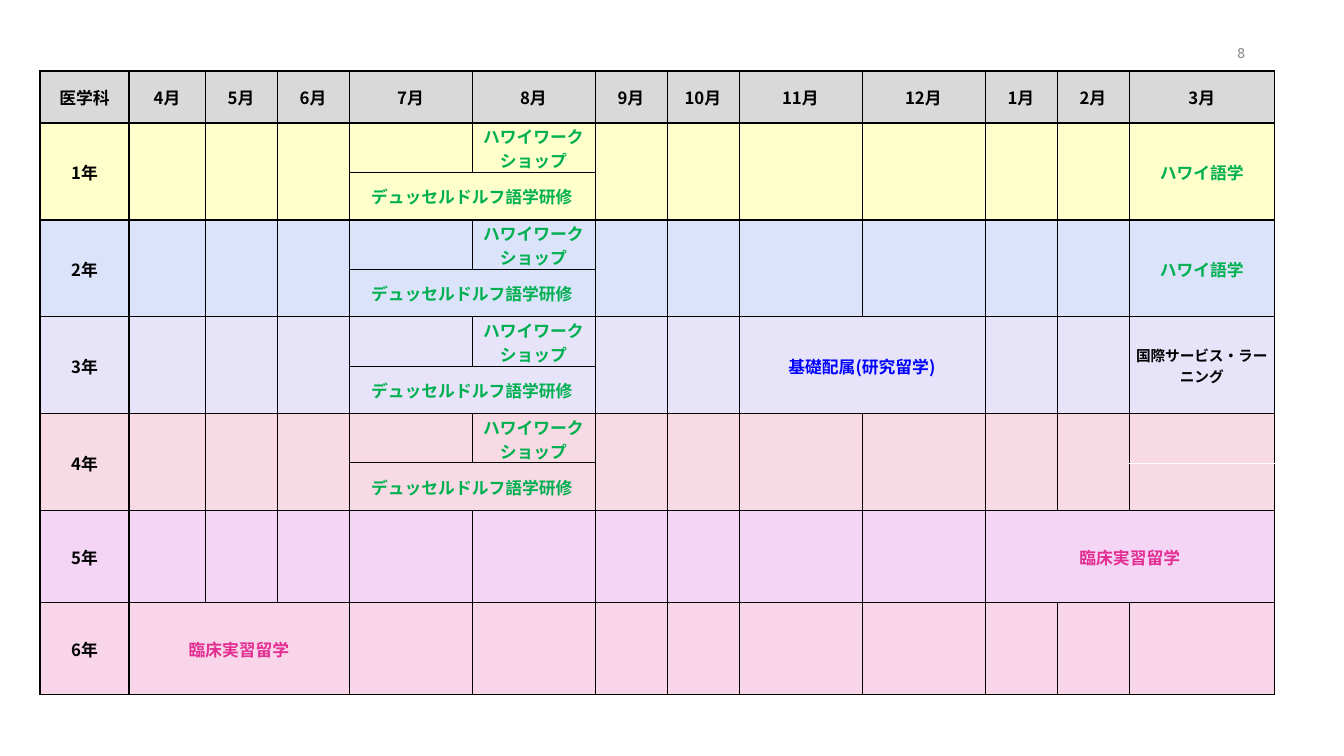
from dataclasses import dataclass
from typing import Optional

import lxml.etree
import pptx
import pptx.dml.color
import pptx.enum.text
import pptx.oxml.ns
import pptx.util

RGBColor = pptx.dml.color.RGBColor
EMU_PER_PX = 914400 / 100.8

BLACK = RGBColor(0x00, 0x00, 0x00)
WHITE = RGBColor(0xFF, 0xFF, 0xFF)
GREY = RGBColor(0x8C, 0x8C, 0x8C)
GREEN = RGBColor(0x00, 0xB0, 0x50)
BLUE = RGBColor(0x00, 0x00, 0xFF)
MAGENTA = RGBColor(0xE3, 0x2D, 0x91)
HEADER_FILL = RGBColor(0xD9, 0xD9, 0xD9)

TABLE_FONT = "Noto Sans CJK JP"
NUMBER_FONT = "Roboto Slab"
COLUMN_WIDTHS = [89, 76, 72, 72, 123, 123, 72, 72, 123, 123, 72, 72, 146]
ROW_HEIGHTS = [52] + [49, 48] * 4 + [92, 92]
MONTHS = [4, 5, 6, 7, 8, 9, 10, 11, 12, 1, 2, 3]
JULY, AUGUST, MARCH = 4, 5, 12


@dataclass(frozen=True)
class Year:
    label: str
    fill: RGBColor
    row: int
    rows: int = 1


@dataclass(frozen=True)
class Entry:
    row: int
    column: int
    text: str = ""
    colour: RGBColor = BLACK
    rows: int = 1
    columns: int = 1
    size: float = 12


@dataclass(frozen=True)
class Edge:
    colour: RGBColor
    points: float


THICK = Edge(BLACK, 1)
THIN = Edge(BLACK, 0.5)
FAINT = Edge(WHITE, 0.25)

YEARS = [
    Year("医学科", HEADER_FILL, 0),
    Year("1年", RGBColor(0xFF, 0xFF, 0xCC), 1, 2),
    Year("2年", RGBColor(0xDA, 0xE3, 0xFA), 3, 2),
    Year("3年", RGBColor(0xE7, 0xE3, 0xF9), 5, 2),
    Year("4年", RGBColor(0xF7, 0xDA, 0xE3), 7, 2),
    Year("5年", RGBColor(0xF4, 0xD5, 0xF5), 9),
    Year("6年", RGBColor(0xF9, 0xD5, 0xE9), 10),
]
YEAR_BOUNDARIES = {year.row for year in YEARS} | {len(ROW_HEIGHTS)}

PROGRAMMES = [
    Entry(1, MARCH, "ハワイ語学", GREEN, rows=2),
    Entry(3, 3, rows=2),
    Entry(3, 9, rows=2),
    Entry(3, 11, rows=2),
    Entry(3, MARCH, "ハワイ語学", GREEN, rows=2),
    Entry(5, 8, "基礎配属(研究留学)", BLUE, rows=2, columns=2),
    Entry(5, MARCH, "国際サービス・ラーニング", rows=2, size=10.5),
    Entry(7, 10, rows=2),
    Entry(9, 10, "臨床実習留学", MAGENTA, columns=3),
    Entry(10, 1, "臨床実習留学", MAGENTA, columns=3),
]


def px(length: int) -> pptx.util.Emu:
    return pptx.util.Emu(round(length * EMU_PER_PX))


def schedule_entries() -> list[Entry]:
    entries = [Entry(0, column, f"{month}月") for column, month in enumerate(MONTHS, 1)]
    for year in YEARS:
        entries.append(Entry(year.row, 0, year.label, rows=year.rows))
        if year.rows == 2:
            entries.append(Entry(year.row, AUGUST, "ハワイワークショップ", GREEN))
            entries.append(Entry(year.row + 1, JULY, "デュッセルドルフ語学研修", GREEN, columns=2))
    entries += PROGRAMMES
    taken = {
        (row, column)
        for entry in entries
        for row in range(entry.row, entry.row + entry.rows)
        for column in range(entry.column, entry.column + entry.columns)
    }
    entries += [
        Entry(row, column)
        for row in range(len(ROW_HEIGHTS))
        for column in range(len(COLUMN_WIDTHS))
        if (row, column) not in taken
    ]
    return entries


def vertical_edge(boundary: int) -> Edge:
    return THICK if boundary in (0, 1, len(COLUMN_WIDTHS)) else THIN


def horizontal_edge(boundary: int, column: int) -> Optional[Edge]:
    if boundary in YEAR_BOUNDARIES:
        return THICK
    if column in (JULY, AUGUST):
        return THIN
    return FAINT if column == MARCH else None


def add_border(cell: pptx.table._Cell, side: str, edge: Optional[Edge]) -> None:
    qn = pptx.oxml.ns.qn
    line = lxml.etree.SubElement(cell._tc.get_or_add_tcPr(), qn(f"a:ln{side}"))
    if edge is None:
        lxml.etree.SubElement(line, qn("a:noFill"))
        return
    line.set("w", str(pptx.util.Pt(edge.points)))
    solid = lxml.etree.SubElement(line, qn("a:solidFill"))
    lxml.etree.SubElement(solid, qn("a:srgbClr"), val=str(edge.colour))


def style_paragraph(para: pptx.text.text._Paragraph, name: str, size: float, colour: RGBColor) -> None:
    para.font.size = pptx.util.Pt(size)
    para.font.color.rgb = colour
    para.font.name = name
    lxml.etree.SubElement(para.font._element, pptx.oxml.ns.qn("a:ea"), typeface=name)


def draw_entry(table: pptx.table.Table, entry: Entry) -> None:
    last_row = entry.row + entry.rows
    last_column = entry.column + entry.columns
    origin = table.cell(entry.row, entry.column)
    if entry.rows * entry.columns > 1:
        origin.merge(table.cell(last_row - 1, last_column - 1))
    fill = next(year.fill for year in reversed(YEARS) if year.row <= entry.row)
    edges = {
        "L": vertical_edge(entry.column),
        "R": vertical_edge(last_column),
        "T": horizontal_edge(entry.row, entry.column),
        "B": horizontal_edge(last_row, entry.column),
    }
    for row in range(entry.row, last_row):
        for column in range(entry.column, last_column):
            cell = table.cell(row, column)
            for side, edge in edges.items():
                add_border(cell, side, edge)
            cell.fill.solid()
            cell.fill.fore_color.rgb = fill
    origin.margin_left = origin.margin_right = origin.margin_top = px(1)
    origin.margin_bottom = 0
    origin.vertical_anchor = pptx.enum.text.MSO_ANCHOR.MIDDLE
    para = origin.text_frame.paragraphs[0]
    para.text = entry.text
    para.alignment = pptx.enum.text.PP_ALIGN.CENTER
    para.font.bold = True
    style_paragraph(para, TABLE_FONT, entry.size, entry.colour)


def add_schedule(page: pptx.slide.Slide) -> None:
    table = page.shapes.add_table(
        len(ROW_HEIGHTS), len(COLUMN_WIDTHS),
        px(40), px(71), px(sum(COLUMN_WIDTHS)), px(sum(ROW_HEIGHTS)),
    ).table
    table.first_row = table.horz_banding = False
    for column, width in zip(table.columns, COLUMN_WIDTHS):
        column.width = px(width)
    for row, height in zip(table.rows, ROW_HEIGHTS):
        row.height = px(height)
    for entry in schedule_entries():
        draw_entry(table, entry)


def add_page_number(page: pptx.slide.Slide) -> None:
    box = page.shapes.add_textbox(px(1154), px(35), px(101), px(35))
    box.text_frame.word_wrap = True
    box.text_frame.vertical_anchor = pptx.enum.text.MSO_ANCHOR.MIDDLE
    para = box.text_frame.paragraphs[0]
    para.text = "8"
    para.alignment = pptx.enum.text.PP_ALIGN.RIGHT
    style_paragraph(para, NUMBER_FONT, 10, GREY)


def main() -> None:
    deck = pptx.Presentation()
    deck.slide_width = px(1344)
    deck.slide_height = px(756)
    page = deck.slides.add_slide(deck.slide_layouts[6])
    add_page_number(page)
    add_schedule(page)
    deck.save("out.pptx")


if __name__ == "__main__":
    main()
